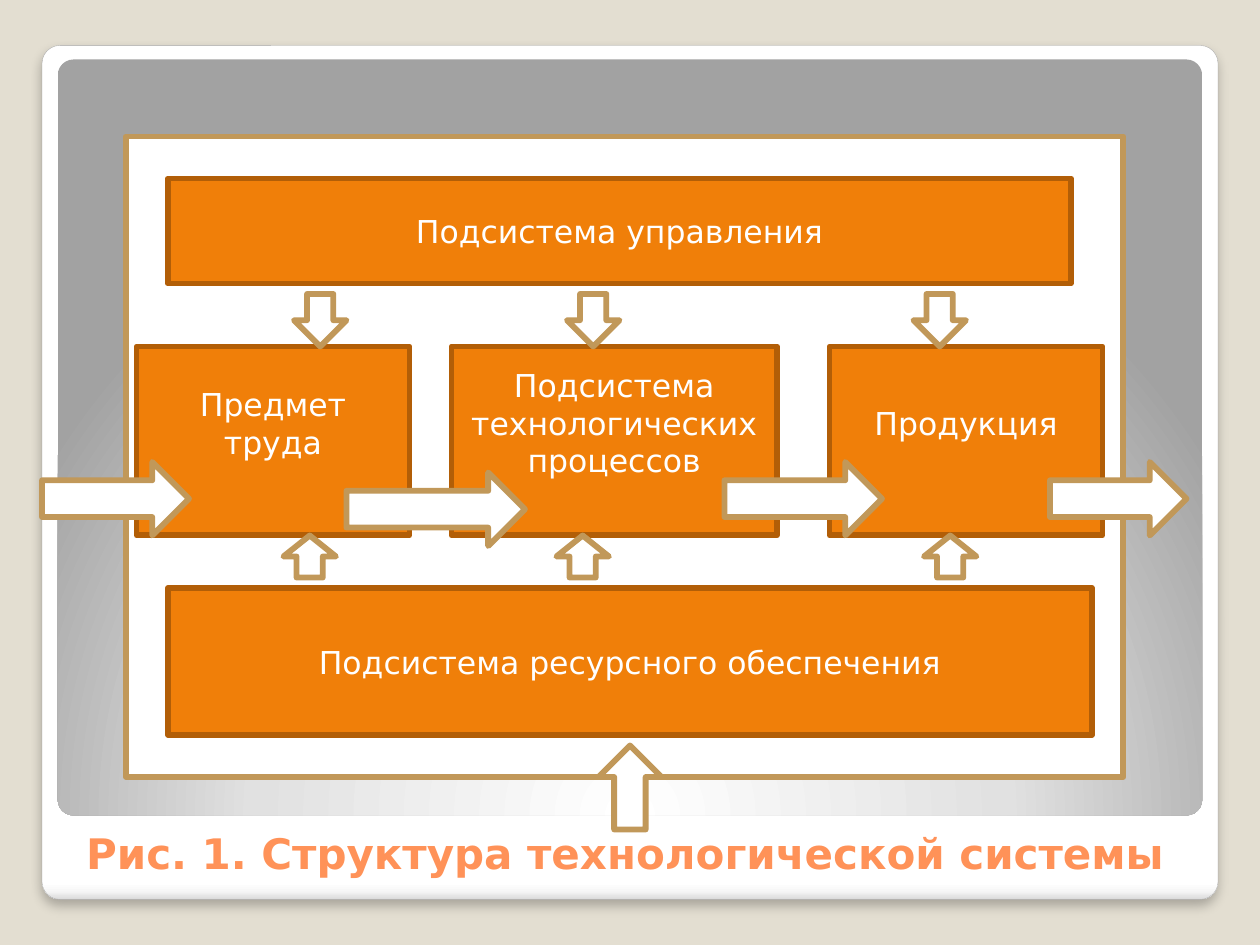
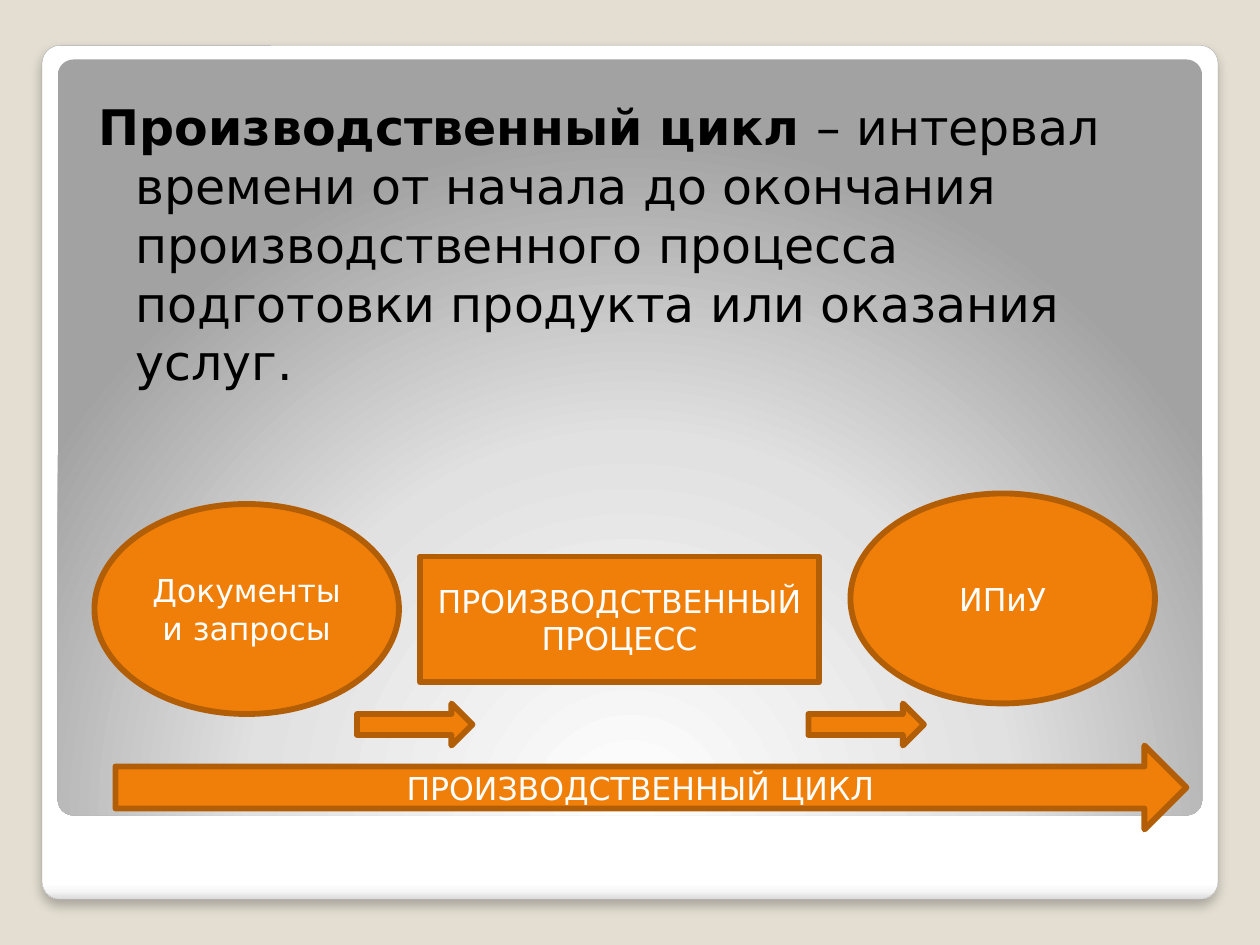
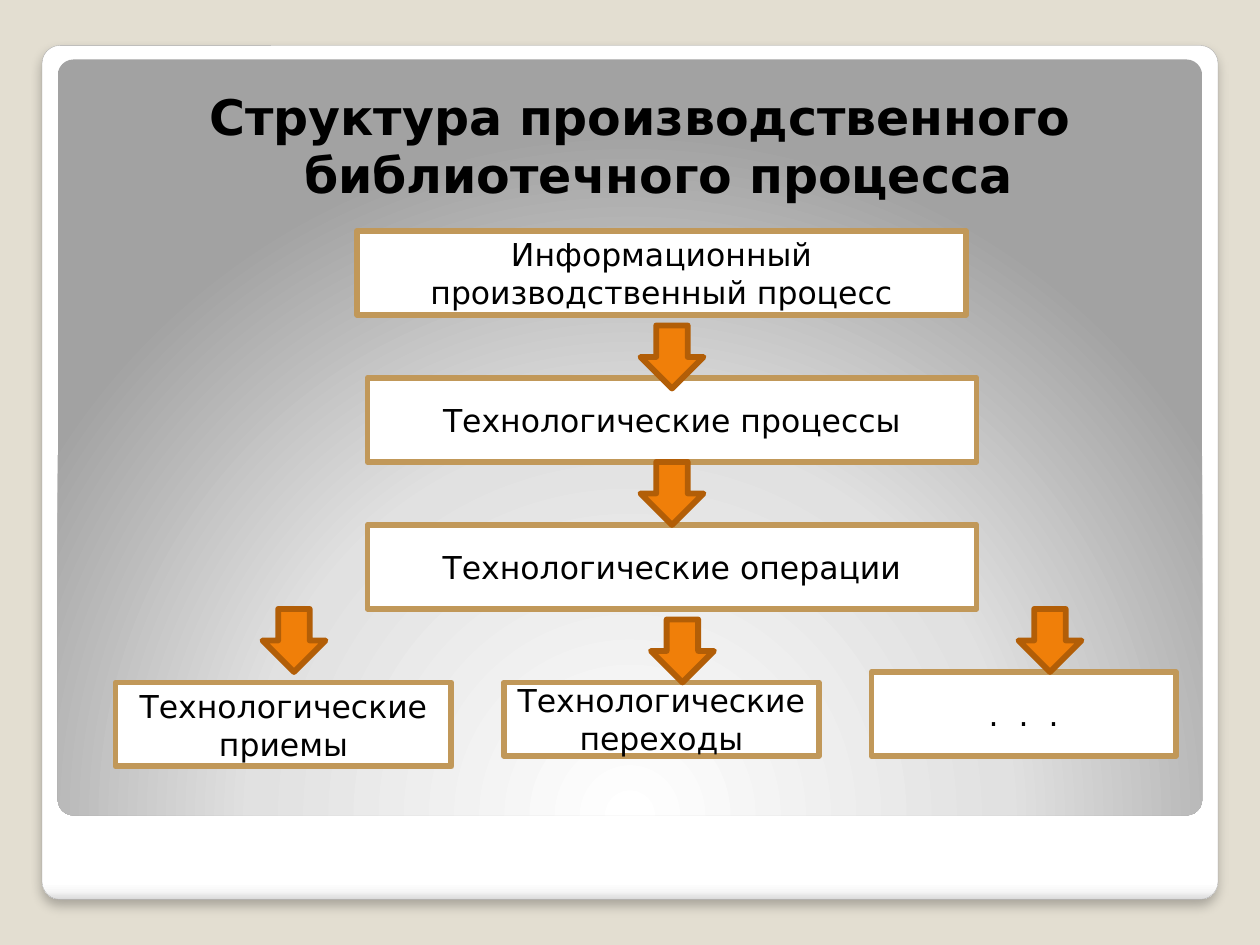
import pptx
import pptx.dml.color
import pptx.enum.shapes
import pptx.enum.text
import pptx.oxml
import pptx.oxml.ns
import pptx.util

Pt = pptx.util.Pt
RGB = pptx.dml.color.RGBColor
KIND = pptx.enum.shapes.MSO_SHAPE
ALIGN = pptx.enum.text.PP_ALIGN
ANCHOR = pptx.enum.text.MSO_ANCHOR
FIT = pptx.enum.text.MSO_AUTO_SIZE

FONT = "DejaVu Sans"
SAND = RGB(0xE3, 0xDE, 0xD1)
WHITE = RGB(0xFF, 0xFF, 0xFF)
BLACK = RGB(0, 0, 0)
ORANGE = RGB(0xF0, 0x7F, 0x09)
BROWN = RGB(0xB2, 0x5E, 0x07)
TAN = RGB(0xC1, 0x98, 0x59)
CORAL = RGB(0xFF, 0x92, 0x58)
GREY = RGB(0xA4, 0xA4, 0xA4)

# Each look is fill, line and text colour.
SOLID = (ORANGE, BROWN, WHITE)
PLAIN = (WHITE, TAN, BLACK)

NS = pptx.oxml.ns.nsdecls("a")
FRAME = [(0, "FFFFFF"), (98, "FFFFFF"), (99, "F7F7F7"), (100, "DADADA")]
PANEL = [(0, "FFFFFF"), (55, "E1E1E1"), (100, "A2A2A2")]
DOWN = '<a:lin ang="5400000" scaled="0"/>'
GLOW = ('<a:path path="circle"><a:fillToRect l="50000" t="175000" '
        'r="50000" b="-75000"/></a:path>')
SHADE = (f'<a:outerShdw {NS} blurRad="76200" dist="50800" dir="5400000" '
         'algn="t" rotWithShape="0"><a:srgbClr val="000000">'
         '<a:alpha val="25000"/></a:srgbClr></a:outerShdw>')


def place(shape, left, top, width, height):
    shape.left, shape.top = Pt(left), Pt(top)
    shape.width, shape.height = Pt(width), Pt(height)


def write(para, text, size, color, bold=False):
    run = para.add_run()
    run.text = text
    font = run.font
    font.name, font.size, font.bold = FONT, Pt(size), bold
    font.color.rgb = color


def draw(slide, kind, box, look, text="", lift=0):
    """Add a shape; lift is the space kept free below its text."""
    shape = slide.shapes.add_shape(kind, *map(Pt, box))
    fill, line, ink = look
    shape.shadow.inherit = False
    shape.fill.solid()
    shape.fill.fore_color.rgb = fill
    shape.line.color.rgb = line
    shape.line.width = Pt(3.35)
    if text:
        frame = shape.text_frame
        frame.word_wrap = True
        frame.vertical_anchor = ANCHOR.MIDDLE
        frame.margin_bottom = Pt(3.6 + lift)
        para = frame.paragraphs[0]
        para.alignment = ALIGN.CENTER
        write(para, text, 18, ink)


def card(slide, box, stops, way):
    """Add a rounded card with a gradient fill."""
    shape = slide.shapes.add_shape(KIND.ROUNDED_RECTANGLE, *map(Pt, box))
    shape.adjustments[0] = 0.021
    shape.shadow.inherit = False
    shape.line.fill.background()
    shape.fill.background()
    marks = "".join(f'<a:gs pos="{pos * 1000}"><a:srgbClr val="{code}"/></a:gs>'
                    for pos, code in stops)
    grad = pptx.oxml.parse_xml(
        f'<a:gradFill {NS} rotWithShape="1"><a:gsLst>{marks}</a:gsLst>{way}</a:gradFill>')
    props = shape.element.spPr
    props.replace(props.find(pptx.oxml.ns.qn("a:noFill")), grad)
    return shape


def dress(master, slide):
    """Give the master its background and cards, drawn by way of a slide."""
    back = master.background.fill
    back.solid()
    back.fore_color.rgb = SAND
    frame = card(slide, (24, 26, 672, 488), FRAME, DOWN)
    frame.line.color.rgb = GREY
    frame.line.width = Pt(0.16)
    glow = frame.element.spPr.find(pptx.oxml.ns.qn("a:effectLst"))
    glow.append(pptx.oxml.parse_xml(SHADE))
    panel = card(slide, (33, 34, 654, 432), PANEL, GLOW)
    for spot, shape in enumerate((frame, panel), 2):
        master.shapes.element.insert(spot, shape.element)


def head(slide, text):
    title = slide.shapes.title
    place(title, 42, 462, 644, 43)
    frame = title.text_frame
    frame.auto_size = FIT.NONE
    frame.vertical_anchor = ANCHOR.BOTTOM
    para = frame.paragraphs[0]
    para.alignment = ALIGN.LEFT
    write(para, text, 24, CORAL, True)


def body(slide, box, parts, align):
    """Fill the body with (text, bold) parts and drop the unused title."""
    title = slide.shapes.title.element
    title.getparent().remove(title)
    holder = slide.placeholders[1]
    place(holder, *box)
    frame = holder.text_frame
    frame.auto_size = FIT.NONE
    frame.margin_left, frame.margin_top = Pt(14.4), Pt(7.2)
    frame.margin_right, frame.margin_bottom = Pt(7.2), Pt(3.6)
    para = frame.paragraphs[0]
    para.alignment = align
    para.space_before = Pt(2.5)
    props = para._p.get_or_add_pPr()
    props.set("marL", str(Pt(21)))
    props.set("indent", str(Pt(-21)))
    props.append(pptx.oxml.parse_xml(f"<a:buNone {NS}/>"))
    for text, bold in parts:
        write(para, text, 28, BLACK, bold)


def system(slide):
    head(slide, "Рис. 1. Структура технологической системы")
    draw(slide, KIND.RECTANGLE, (72, 78, 570, 366), PLAIN)
    for left, width, text in ((78, 156, "Предмет труда"),
                              (258, 186, "Подсистема технологических процессов"),
                              (474, 156, "Продукция")):
        draw(slide, KIND.RECTANGLE, (left, 198, width, 108), SOLID, text, 21)
    draw(slide, KIND.RECTANGLE, (96, 102, 516, 60), SOLID, "Подсистема управления")
    draw(slide, KIND.RECTANGLE, (96, 336, 528, 84), SOLID,
         "Подсистема ресурсного обеспечения")
    for left, top, width in ((24, 264, 84), (414, 264, 90),
                             (198, 270, 102), (600, 264, 78)):
        draw(slide, KIND.RIGHT_ARROW, (left, top, width, 42), PLAIN)
    for left in (168, 324, 522):
        draw(slide, KIND.DOWN_ARROW, (left, 168, 30, 30), PLAIN)
    for left in (162, 318, 528):
        draw(slide, KIND.UP_ARROW, (left, 306, 30, 24), PLAIN)
    draw(slide, KIND.UP_ARROW, (342, 426, 36, 48), PLAIN)


def cycle(slide):
    body(slide, (42, 48, 644, 444),
         (("Производственный цикл ", True),
          ("– интервал времени от начала до окончания производственного "
           "процесса подготовки продукта или оказания услуг.", False)), ALIGN.LEFT)
    for left, top, text in ((54, 288, "Документы и запросы"), (486, 282, "ИПиУ")):
        draw(slide, KIND.OVAL, (left, top, 174, 120), SOLID, text)
    draw(slide, KIND.RECTANGLE, (240, 318, 228, 72), SOLID,
         "ПРОИЗВОДСТВЕННЫЙ ПРОЦЕСС")
    for left in (204, 462):
        draw(slide, KIND.RIGHT_ARROW, (left, 402, 66, 24), SOLID)
    draw(slide, KIND.RIGHT_ARROW, (66, 426, 612, 48), SOLID, "ПРОИЗВОДСТВЕННЫЙ ЦИКЛ")


def levels(slide):
    body(slide, (40, 42, 644, 456),
         (("Структура производственного библиотечного процесса", True),), ALIGN.CENTER)
    for box, text in (
            ((204, 132, 348, 48), "Информационный производственный процесс"),
            ((210, 216, 348, 48), "Технологические процессы"),
            ((210, 300, 348, 48), "Технологические операции"),
            ((498, 384, 174, 48), ".  .  ."),
            ((288, 390, 180, 42), "Технологические переходы"),
            ((66, 390, 192, 48), "Технологические приемы")):
        draw(slide, KIND.RECTANGLE, box, PLAIN, text)
    for left, top in ((366, 186), (366, 264), (582, 348), (372, 354), (150, 348)):
        draw(slide, KIND.DOWN_ARROW, (left, top, 36, 36), SOLID)


def main():
    deck = pptx.Presentation()
    deck.slide_width, deck.slide_height = Pt(720), Pt(540)
    for layout, build in ((5, system), (1, cycle), (1, levels)):
        slide = deck.slides.add_slide(deck.slide_layouts[layout])
        if build is system:
            dress(deck.slide_master, slide)
        build(slide)
    deck.save("out.pptx")


if __name__ == "__main__":
    main()
